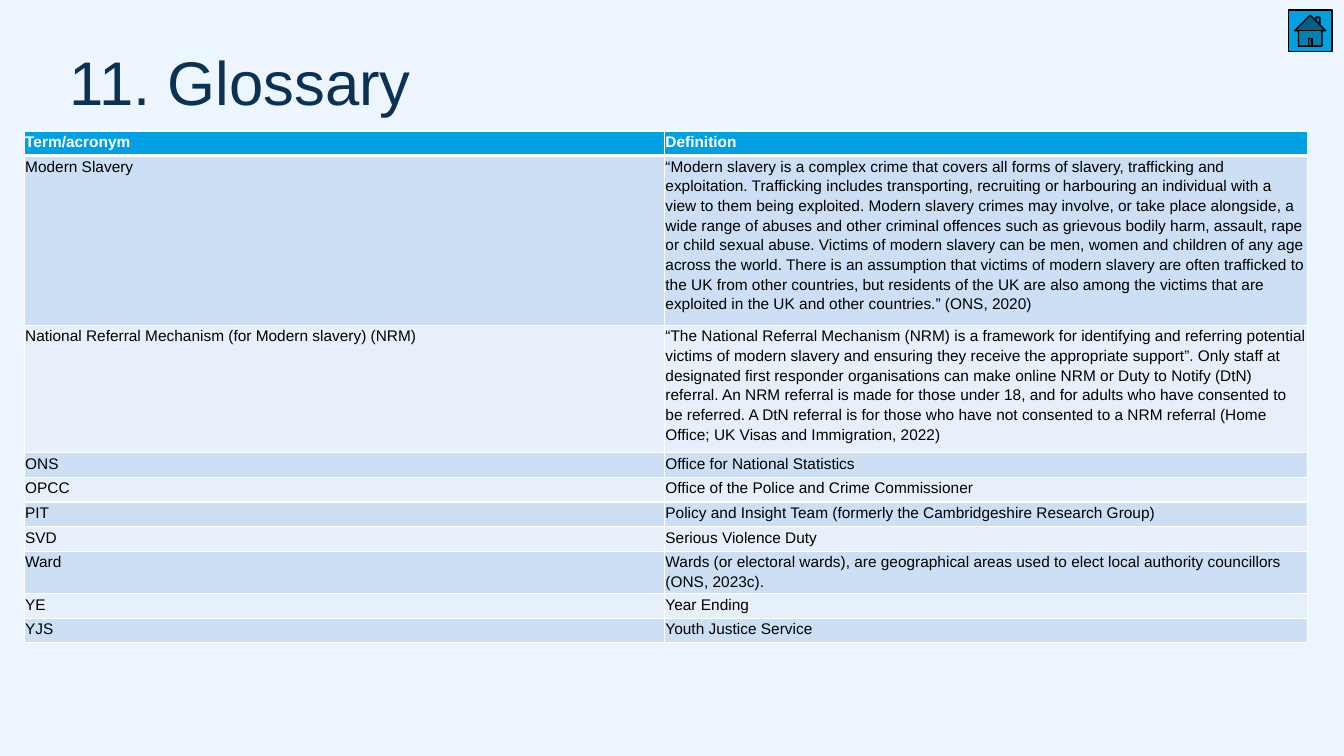
from lxml import etree
from pptx import Presentation
from pptx.dml.color import RGBColor
from pptx.enum.shapes import MSO_SHAPE
from pptx.enum.text import MSO_ANCHOR
from pptx.oxml.ns import qn
from pptx.util import Inches, Pt

BACKGROUND, NAVY, BLUE = "EDF6FF", "0B3153", "00A0E2"
DARK_BAND, LIGHT_BAND = "CCDFF4", "E7F0FA"
WHITE, BLACK = "FFFFFF", "000000"

GLOSSARY = [
    ("Term/acronym", "Definition"),
    ("Modern Slavery",
     "“Modern slavery is a complex crime that covers all forms of slavery, trafficking and "
     "exploitation. Trafficking includes transporting, recruiting or harbouring an individual "
     "with a view to them being exploited. Modern slavery crimes may involve, or take place "
     "alongside, a wide range of abuses and other criminal offences such as grievous bodily "
     "harm, assault, rape or child sexual abuse. Victims of modern slavery can be men, women "
     "and children of any age across the world. There is an assumption that victims of modern "
     "slavery are often trafficked to the UK from other countries, but residents of the UK are "
     "also among the victims that are exploited in the UK and other countries.” (ONS, 2020)"),
    ("National Referral Mechanism (for Modern slavery) (NRM)",
     "“The National Referral Mechanism (NRM) is a framework for identifying and referring "
     "potential victims of modern slavery and ensuring they receive the appropriate support”. "
     "Only staff at designated first responder organisations can make online NRM or Duty to "
     "Notify (DtN) referral. An NRM referral is made for those under 18, and for adults who "
     "have consented to be referred. A DtN referral is for those who have not consented to a "
     "NRM referral (Home Office; UK Visas and Immigration, 2022)"),
    ("ONS", "Office for National Statistics"),
    ("OPCC", "Office of the Police and Crime Commissioner"),
    ("PIT", "Policy and Insight Team (formerly the Cambridgeshire Research Group)"),
    ("SVD", "Serious Violence Duty"),
    ("Ward", "Wards (or electoral wards), are geographical areas used to elect local "
             "authority councillors (ONS, 2023c)."),
    ("YE", "Year Ending"),
    ("YJS", "Youth Justice Service"),
]


def color(hex_value):
    return RGBColor.from_string(hex_value)


class GlossarySlide:
    font_name = "Arial"

    def __init__(self, presentation):
        self.width = presentation.slide_width
        self.height = presentation.slide_height
        self.slide = presentation.slides.add_slide(presentation.slide_layouts[6])
        fill = self.slide.background.fill
        fill.solid()
        fill.fore_color.rgb = color(BACKGROUND)

    def across(self, percent):
        return round(self.width * percent / 100)

    def down(self, percent):
        return round(self.height * percent / 100)

    def box(self, left, top, width, height):
        return self.across(left), self.down(top), self.across(width), self.down(height)

    def set_text(self, frame, text, size, font_color, line_spacing, bold=False):
        frame.word_wrap = True
        paragraph = frame.paragraphs[0]
        paragraph.text = text
        paragraph.line_spacing = line_spacing
        font = paragraph.font
        font.name, font.size, font.bold = self.font_name, Pt(size), bold
        font.color.rgb = color(font_color)
        return paragraph

    def title(self, text, area):
        frame = self.slide.shapes.add_textbox(*self.box(*area)).text_frame
        frame.margin_left = frame.margin_right = frame.margin_top = frame.margin_bottom = 0
        frame.vertical_anchor = MSO_ANCHOR.TOP
        self.set_text(frame, text, 44, NAVY, 0.9)

    def border(self, cell, side, points):
        properties = cell._tc.get_or_add_tcPr()
        line = etree.SubElement(properties, qn(f"a:ln{side}"), w=str(Pt(points)))
        fill = etree.SubElement(line, qn("a:solidFill"))
        etree.SubElement(fill, qn("a:srgbClr"), val=WHITE)

    def cell(self, cell, text, row):
        header = row == 0
        cell.margin_left = cell.margin_right = Inches(0.01)
        cell.margin_top = cell.margin_bottom = 0
        font_color = WHITE if header else BLACK
        paragraph = self.set_text(cell.text_frame, text, 11, font_color, 1.15, header)
        paragraph.space_after = Pt(10)
        for side in "LRTB":
            under_header = (row, side) in ((0, "B"), (1, "T"))
            self.border(cell, side, 3 if under_header else 1)
        cell.fill.solid()
        band = DARK_BAND if row % 2 else LIGHT_BAND
        cell.fill.fore_color.rgb = color(BLUE if header else band)

    def table(self, entries, left, top, column_widths, row_height, tall_rows):
        heights = [tall_rows.get(row, row_height) for row in range(len(entries))]
        area = self.box(left, top, sum(column_widths), sum(heights))
        table = self.slide.shapes.add_table(len(entries), len(column_widths), *area).table
        for column, width in zip(table.columns, column_widths):
            column.width = self.across(width)
        for row, (entry, height) in enumerate(zip(entries, heights)):
            table.rows[row].height = self.down(height)
            for column, text in enumerate(entry):
                self.cell(table.cell(row, column), text, row)

    def home_button(self, area):
        shape = self.slide.shapes.add_shape(MSO_SHAPE.ACTION_BUTTON_HOME, *self.box(*area))
        shape.shadow.inherit = False
        shape.fill.solid()
        shape.fill.fore_color.rgb = color(BLUE)
        shape.line.color.rgb = color(BLACK)
        shape.line.width = Pt(1)


def main():
    presentation = Presentation()
    presentation.slide_width, presentation.slide_height = Inches(13.33), Inches(7.5)
    slide = GlossarySlide(presentation)
    slide.title("11. Glossary", (5.18, 6.93, 86.27, 17.73))
    slide.table(GLOSSARY, 1.8, 17.33, (47.64, 47.86), 3.25, {1: 14, 2: 14})
    slide.home_button((95.87, 1.33, 3.23, 5.47))
    presentation.save("out.pptx")


if __name__ == "__main__":
    main()
